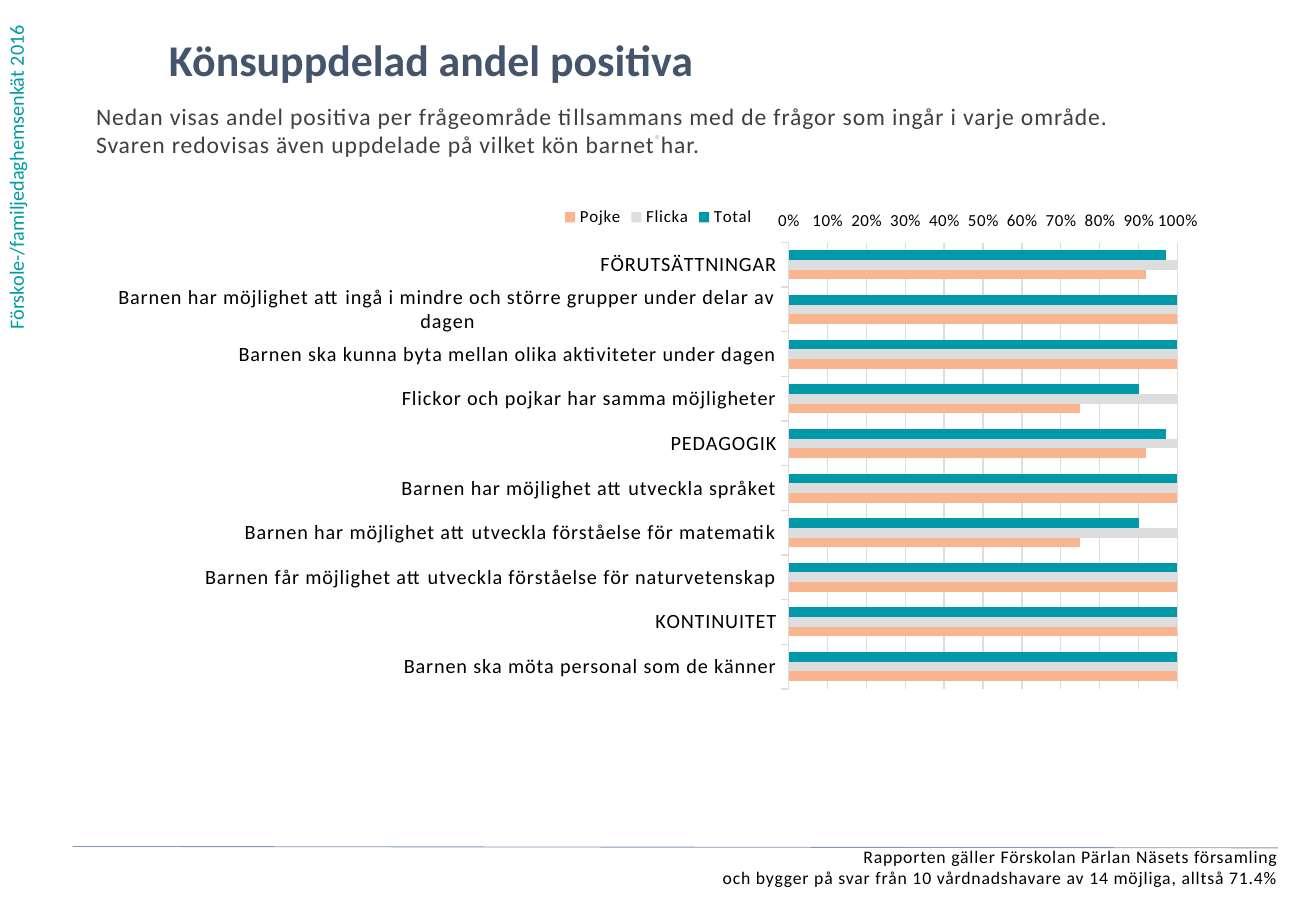
from lxml import etree
from pptx import Presentation
from pptx.chart import data as chart_data
from pptx.dml.color import RGBColor
from pptx.enum import chart as chart_enum, shapes, text
from pptx.oxml import ns
from pptx.util import Cm, Pt

FONT = "Calibri"
TEAL_TEXT = RGBColor(0x00, 0x9B, 0xA4)
TITLE_BLUE = RGBColor(0x44, 0x54, 0x6A)
BODY_GREY = RGBColor(0x40, 0x40, 0x40)
DOT_GREY = RGBColor(0xD2, 0xD9, 0xE2)
RULE_BLUE = RGBColor(0x84, 0x97, 0xB0)
GRID_GREY = RGBColor(0xDD, 0xDD, 0xDD)
BLACK = RGBColor(0x00, 0x00, 0x00)
TEAL = RGBColor(0x00, 0x99, 0xAA)
PEACH = RGBColor(0xF9, 0xB5, 0x90)

LETTER_SPACING = "50"  # hundredths of a point

CATEGORIES = [
    "FÖRUTSÄTTNINGAR",
    "Barnen har möjlighet att ingå i mindre och större grupper under delar av dagen",
    "Barnen ska kunna byta mellan olika aktiviteter under dagen",
    "Flickor och pojkar har samma möjligheter",
    "PEDAGOGIK",
    "Barnen har möjlighet att utveckla språket",
    "Barnen har möjlighet att utveckla förståelse för matematik",
    "Barnen får möjlighet att utveckla förståelse för naturvetenskap",
    "KONTINUITET",
    "Barnen ska möta personal som de känner",
]
SERIES = [
    ("Total", TEAL, [0.97, 1, 1, 0.9, 0.97, 1, 0.9, 1, 1, 1]),
    ("Flicka", GRID_GREY, [1] * 10),
    ("Pojke", PEACH, [0.92, 1, 1, 0.75, 0.92, 1, 0.75, 1, 1, 1]),
]
# Inner plot area as fractions of the chart
PLOT_LAYOUT = {"x": 0.616, "y": 0.09, "w": 0.346, "h": 0.83}


def place(shape, left, top, width, height):
    shape.left, shape.top = Cm(left), Cm(top)
    shape.width, shape.height = Cm(width), Cm(height)


def write_text(frame, lines, *, size, color, bold=False, spaced=True,
               align=text.PP_ALIGN.LEFT, margins=True):
    """Write one paragraph per line with a shared format."""
    frame.word_wrap = True
    frame.auto_size = text.MSO_AUTO_SIZE.NONE
    frame.vertical_anchor = text.MSO_ANCHOR.TOP
    if not margins:
        frame.margin_left = frame.margin_right = 0
        frame.margin_top = frame.margin_bottom = 0
    for index, line in enumerate(lines):
        paragraph = frame.paragraphs[0] if index == 0 else frame.add_paragraph()
        paragraph.alignment = align
        run = paragraph.add_run()
        run.text = line
        run.font.name = FONT
        run.font.size = Pt(size)
        run.font.bold = bold
        run.font.color.rgb = color
        if spaced:
            run.font._element.set("spc", LETTER_SPACING)


def add_text(slide, box, lines, **text_format):
    shape = slide.shapes.add_textbox(*map(Cm, box))
    write_text(shape.text_frame, lines, **text_format)
    return shape


def format_chart_font(font, size):
    font.name = FONT
    font.size = Pt(size)
    font.bold = False
    font.color.rgb = BLACK
    font._element.set("spc", LETTER_SPACING)


def set_plot_layout(chart):
    plot_area = chart._chartSpace.chart.plotArea
    for old in plot_area.findall(ns.qn("c:layout")):
        plot_area.remove(old)
    layout = etree.Element(ns.qn("c:layout"))
    manual = etree.SubElement(layout, ns.qn("c:manualLayout"))
    settings = [("layoutTarget", "inner"), ("xMode", "edge"), ("yMode", "edge")]
    for name, value in settings + list(PLOT_LAYOUT.items()):
        etree.SubElement(manual, ns.qn(f"c:{name}")).set("val", str(value))
    plot_area.insert(0, layout)


def add_bar_chart(slide, box):
    data = chart_data.CategoryChartData(number_format="0%")
    data.categories = CATEGORIES
    for name, _, values in SERIES:
        data.add_series(name, values)
    chart = slide.shapes.add_chart(
        chart_enum.XL_CHART_TYPE.BAR_CLUSTERED, *map(Cm, box), data).chart
    chart.has_title = False
    format_chart_font(chart.font, 10)
    set_plot_layout(chart)

    # Bars
    plot = chart.plots[0]
    plot.gap_width = 162
    plot.overlap = 0
    plot.vary_by_categories = False
    for series, (_, color, _) in zip(plot.series, SERIES):
        series.format.fill.solid()
        series.format.fill.fore_color.rgb = color

    # Legend
    chart.has_legend = True
    chart.legend.position = chart_enum.XL_LEGEND_POSITION.TOP
    chart.legend.include_in_layout = False
    format_chart_font(chart.legend.font, 10)

    # Category axis, first category on top
    category_axis = chart.category_axis
    category_axis.reverse_order = True
    category_axis.crosses = chart_enum.XL_AXIS_CROSSES.MAXIMUM
    category_axis.major_tick_mark = chart_enum.XL_TICK_MARK.OUTSIDE
    format_chart_font(category_axis.tick_labels.font, 12)

    # Value axis
    value_axis = chart.value_axis
    value_axis.minimum_scale, value_axis.maximum_scale = 0, 1
    value_axis.major_unit = 0.1
    value_axis.major_tick_mark = chart_enum.XL_TICK_MARK.OUTSIDE
    value_axis.format.line.fill.background()
    value_axis.tick_labels.number_format = "0%;0%"
    value_axis.tick_labels.number_format_is_linked = False
    format_chart_font(value_axis.tick_labels.font, 10)
    value_axis.has_major_gridlines = True
    for line in (category_axis.format.line, value_axis.major_gridlines.format.line):
        line.color.rgb = GRID_GREY
        line.width = Pt(0.75)


def add_rule(slide, start, end):
    rule = slide.shapes.add_connector(
        shapes.MSO_CONNECTOR.STRAIGHT, *map(Cm, start + end))
    rule.line.color.rgb = RULE_BLUE
    rule.line.width = Pt(0.5)
    etree.SubElement(rule._element.spPr, ns.qn("a:effectLst"))


def main():
    presentation = Presentation()
    presentation.slide_width, presentation.slide_height = Cm(27.51), Cm(19.05)
    slide = presentation.slides.add_slide(presentation.slide_layouts[5])

    # Title
    title = slide.shapes.title
    place(title, 3.53, 0.69, 21.18, 1.45)
    write_text(title.text_frame, ["Könsuppdelad andel positiva"], size=26,
               color=TITLE_BLUE, bold=True, spaced=False, margins=False)

    # Survey name along the left edge
    survey = add_text(slide, (-0.05, 0, 1.02, 7.14),
                      ["Förskole-/familjedaghemsenkät 2016"],
                      size=12, color=TEAL_TEXT, spaced=False)
    survey.text_frame._txBody.bodyPr.set("vert", "vert270")

    # Introduction and small dot
    add_text(slide, (2.01, 2.13, 24.03, 1.3),
             ["Nedan visas andel positiva per frågeområde tillsammans med de "
              "frågor som ingår i varje område.",
              "Svaren redovisas även uppdelade på vilket kön barnet har."],
             size=14, color=BODY_GREY, margins=False)
    add_text(slide, (9.83, 2.59, 7.82, 0.99), ["⋅"], size=12, color=DOT_GREY,
             bold=True, align=text.PP_ALIGN.CENTER, margins=False)

    # Chart
    add_bar_chart(slide, (2.01, 4.06, 23.5, 11.25))

    # Footer
    add_text(slide, (0.3, 17.68, 26.42, 1.09),
             ["Rapporten gäller Förskolan Pärlan Näsets församling",
              "och bygger på svar från 10 vårdnadshavare av 14 möjliga, "
              "alltså 71.4%"],
             size=10.5, color=BLACK, align=text.PP_ALIGN.RIGHT, margins=False)
    add_rule(slide, (1.52, 17.7), (26.72, 17.73))

    presentation.save("out.pptx")


if __name__ == "__main__":
    main()
